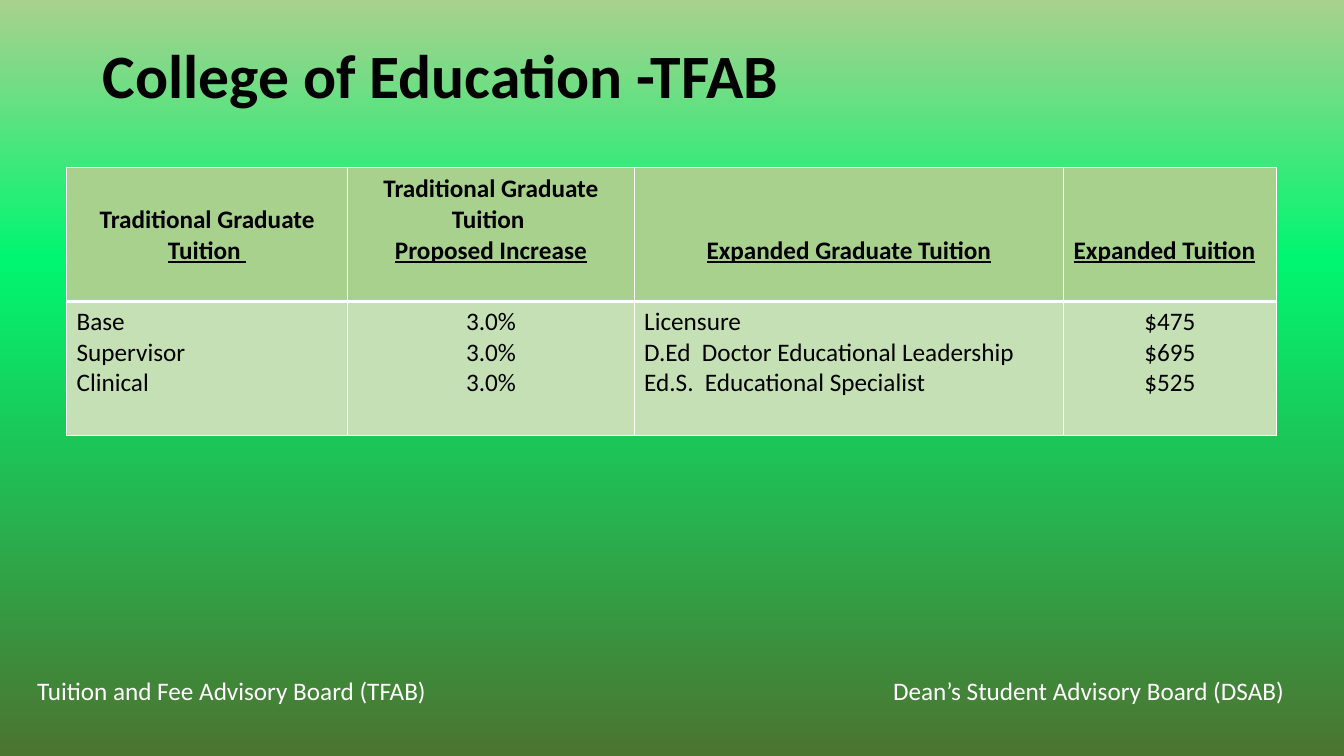
import pptx
import pptx.dml.color
import pptx.enum.text
import pptx.oxml
import pptx.oxml.ns
import pptx.util
from lxml import etree

RGB = pptx.dml.color.RGBColor
ALIGN = pptx.enum.text.PP_ALIGN
ANCHOR = pptx.enum.text.MSO_ANCHOR
Inches = pptx.util.Inches

# Content: a line is a list of (text, underlined) runs
TITLE = "College of Education -TFAB"
BOARDS = [
    ("Tuition and Fee Advisory Board (TFAB)", 0.27, 4.3),
    ("Dean’s Student Advisory Board (DSAB)", 8.76, 4.37),
]
HEADINGS = [
    [[("Traditional Graduate ", False), ("Tuition ", True)]],
    [[("Traditional Graduate Tuition ", False)], [("Proposed Increase", True)]],
    [[("Expanded Graduate Tuition", True)]],
    [[("Expanded Tuition", True)]],
]
RATES = [
    ["Base", "Supervisor", "Clinical"],
    ["3.0%", "3.0%", "3.0%"],
    ["Licensure", "D.Ed  Doctor Educational Leadership", "Ed.S.  Educational Specialist"],
    ["$475", "$695", "$525"],
]
HEADING_ALIGN = [ALIGN.CENTER, ALIGN.CENTER, ALIGN.CENTER, ALIGN.LEFT]
RATE_ALIGN = [ALIGN.LEFT, ALIGN.CENTER, ALIGN.LEFT, ALIGN.CENTER]

# Layout and colours
COLUMN_WIDTHS = [2.79, 2.84, 4.26, 2.11]
ROW_HEIGHT = 1.33
BLACK = RGB(0x00, 0x00, 0x00)
WHITE = RGB(0xFF, 0xFF, 0xFF)
HEADING_FILL = RGB(0xA9, 0xD1, 0x8E)
RATE_FILL = RGB(0xC5, 0xE0, 0xB4)
BACKGROUND = [
    (0, RGB(0x4B, 0x74, 0x30)),
    (66, RGB(0x00, 0xF6, 0x70)),
    (100, RGB(0xA9, 0xD1, 0x8E)),
]


def write(frame, lines, size=18, color=BLACK, bold=False, align=ALIGN.LEFT, spacing=1.0):
    """Fill a text frame; each line is a string or a list of (text, underlined)."""
    frame.word_wrap = True
    for number, line in enumerate(lines):
        paragraph = frame.add_paragraph() if number else frame.paragraphs[0]
        paragraph.alignment = align
        paragraph.line_spacing = spacing
        for text, underlined in [(line, False)] if isinstance(line, str) else line:
            run = paragraph.add_run()
            run.text = text
            run.font.name = "Calibri"
            run.font.size = pptx.util.Pt(size)
            run.font.bold = bold
            run.font.underline = underlined
            run.font.color.rgb = color


def add_borders(cell, widths):
    properties = cell._tc.get_or_add_tcPr()
    for side, width in zip("LRTB", widths):
        properties.append(pptx.oxml.parse_xml(
            f'<a:ln{side} {pptx.oxml.ns.nsdecls("a")} w="{pptx.util.Pt(width)}">'
            f'<a:solidFill><a:srgbClr val="{WHITE}"/></a:solidFill></a:ln{side}>'))


def paint_background(slide):
    fill = slide.background.fill
    fill.gradient()
    fill.gradient_angle = 90
    stops = slide.background._cSld.find(".//" + pptx.oxml.ns.qn("a:gsLst"))
    for stop in list(stops):
        stops.remove(stop)
    for share, color in BACKGROUND:
        stop = etree.SubElement(stops, pptx.oxml.ns.qn("a:gs"), pos=str(share * 1000))
        etree.SubElement(stop, pptx.oxml.ns.qn("a:srgbClr"), val=str(color))


def add_rates(slide):
    table = slide.shapes.add_table(
        2, len(RATES), Inches(0.66), Inches(1.66),
        Inches(sum(COLUMN_WIDTHS)), Inches(2 * ROW_HEIGHT)).table
    for row in table.rows:
        row.height = Inches(ROW_HEIGHT)
    for index, width in enumerate(COLUMN_WIDTHS):
        table.columns[index].width = Inches(width)
        heading, rate = table.cell(0, index), table.cell(1, index)

        # Headings share a baseline one line above the cell's foot
        add_borders(heading, (1, 1, 1, 3))
        heading.fill.solid()
        heading.fill.fore_color.rgb = HEADING_FILL
        heading.vertical_anchor = ANCHOR.BOTTOM
        heading.margin_bottom = Inches(0.35)
        write(heading.text_frame, HEADINGS[index], bold=True, align=HEADING_ALIGN[index])

        add_borders(rate, (1, 1, 3, 1))
        rate.fill.solid()
        rate.fill.fore_color.rgb = RATE_FILL
        write(rate.text_frame, RATES[index], align=RATE_ALIGN[index])


def main():
    deck = pptx.Presentation()
    deck.slide_width, deck.slide_height = Inches(13.33), Inches(7.5)
    slide = deck.slides.add_slide(deck.slide_layouts[5])
    paint_background(slide)

    # Board names along the foot
    for board, left, width in BOARDS:
        box = slide.shapes.add_textbox(Inches(left), Inches(6.65), Inches(width), Inches(0.4))
        write(box.text_frame, [board], color=WHITE)

    # Title
    title = slide.shapes.title
    title.left, title.top = Inches(0.92), Inches(0.4)
    title.width, title.height = Inches(11.5), Inches(1.45)
    title.text_frame.auto_size = pptx.enum.text.MSO_AUTO_SIZE.NONE
    title.text_frame.vertical_anchor = ANCHOR.TOP
    write(title.text_frame, [TITLE], size=44, bold=True, spacing=0.9)

    add_rates(slide)
    deck.save("out.pptx")


if __name__ == "__main__":
    main()
